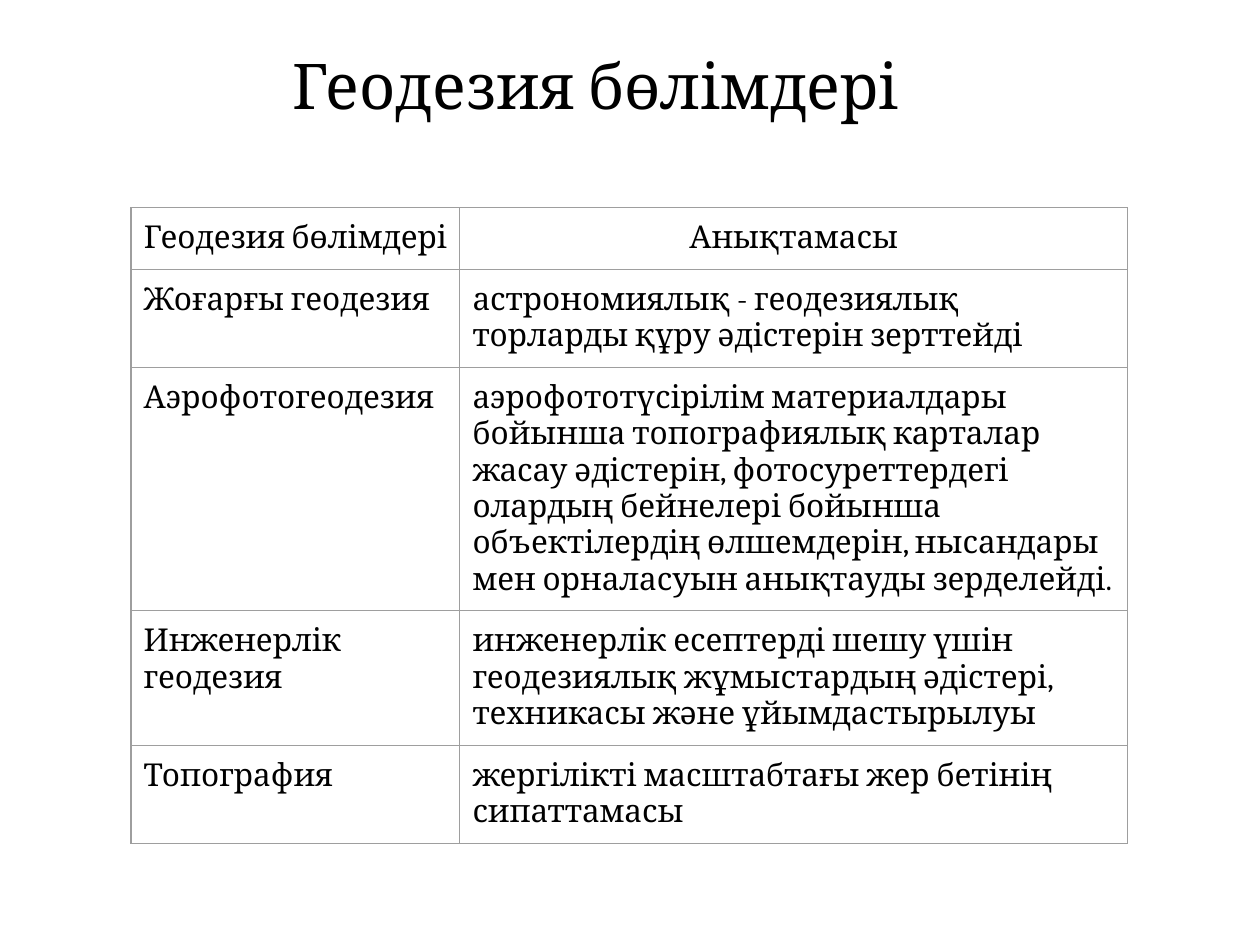
from lxml import etree
from pptx import Presentation
from pptx.dml.color import RGBColor
from pptx.enum import text
from pptx.oxml import ns
from pptx.util import Inches, Pt

FACE = "Cambria"
INK = "000000"
RULE = "9E9E9E"
ROWS = [
    ("Геодезия бөлімдері", "Анықтамасы"),
    ("Жоғарғы геодезия",
     "астрономиялық - геодезиялық торларды құру әдістерін зерттейді"),
    ("Аэрофотогеодезия",
     "аэрофототүсірілім материалдары бойынша топографиялық карталар жасау "
     "әдістерін, фотосуреттердегі олардың бейнелері бойынша объектілердің "
     "өлшемдерін, нысандары мен орналасуын анықтауды зерделейді."),
    ("Инженерлік геодезия",
     "инженерлік есептерді шешу үшін геодезиялық жұмыстардың әдістері, "
     "техникасы және ұйымдастырылуы"),
    ("Топография", "жергілікті масштабтағы жер бетінің сипаттамасы"),
]


def color(code):
    return RGBColor.from_string(code)


def style(para, size, align):
    para.alignment = align
    para.font.name = FACE
    para.font.size = Pt(size)
    para.font.bold = False
    para.font.color.rgb = color(INK)


def border(cell):
    props = cell._tc.get_or_add_tcPr()
    for at, side in enumerate(("lnL", "lnR", "lnT", "lnB")):
        line = etree.Element(ns.qn("a:" + side), w=str(Pt(0.75)))
        fill = etree.SubElement(line, ns.qn("a:solidFill"))
        etree.SubElement(fill, ns.qn("a:srgbClr"), val=RULE)
        props.insert(at, line)


def add_title(slide, words, left, top, width, height):
    title = slide.shapes.title
    title.left, title.top = Inches(left), Inches(top)
    title.width, title.height = Inches(width), Inches(height)
    frame = title.text_frame
    frame.text = words
    frame.auto_size = text.MSO_AUTO_SIZE.NONE
    frame.vertical_anchor = text.MSO_ANCHOR.MIDDLE
    style(frame.paragraphs[0], 36, text.PP_ALIGN.CENTER)


def add_grid(slide, rows, left, top, widths, height):
    table = slide.shapes.add_table(
        len(rows), len(widths), Inches(left), Inches(top),
        Inches(sum(widths)), Inches(height * len(rows))).table
    table.first_row = table.horz_banding = False
    for col, width in zip(table.columns, widths):
        col.width = Inches(width)
    for r, row in enumerate(rows):
        table.rows[r].height = Inches(height)
        align = text.PP_ALIGN.LEFT if r else text.PP_ALIGN.CENTER
        for c, words in enumerate(row):
            cell = table.cell(r, c)
            cell.text = words
            cell.fill.background()
            cell.margin_left = cell.margin_right = Inches(0.1)
            cell.margin_top = cell.margin_bottom = Inches(0.1)
            style(cell.text_frame.paragraphs[0], 18, align)
            border(cell)


def main():
    deck = Presentation()
    deck.slide_width, deck.slide_height = Inches(10), Inches(7.5)
    slide = deck.slides.add_slide(deck.slide_layouts[0])
    empty = slide.placeholders[1].element
    empty.getparent().remove(empty)
    add_title(slide, "Геодезия бөлімдері", 0.48, 0.41, 8.5, 0.52)
    add_grid(slide, ROWS, 1.04, 1.65, (2.61, 5.3), 0.42)
    deck.save("out.pptx")


if __name__ == "__main__":
    main()
